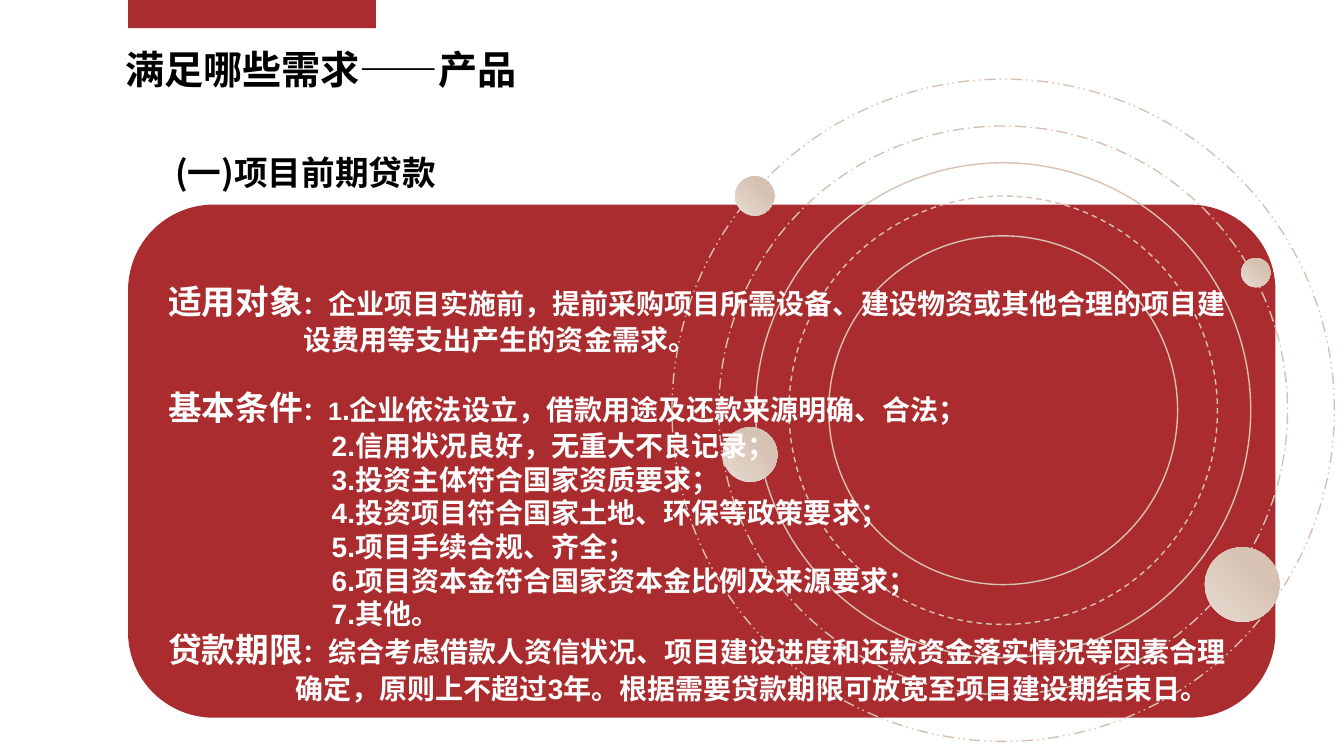
from lxml import etree
from pptx import Presentation
from pptx.dml.color import RGBColor
from pptx.enum.dml import MSO_LINE
from pptx.enum.shapes import MSO_SHAPE
from pptx.enum.text import MSO_ANCHOR, MSO_AUTO_SIZE, PP_ALIGN
from pptx.oxml.ns import qn
from pptx.util import Inches, Pt

RECTANGLE = MSO_SHAPE.RECTANGLE
ROUNDED = MSO_SHAPE.ROUNDED_RECTANGLE
OVAL = MSO_SHAPE.OVAL
SOLID, DASH = MSO_LINE.SOLID, MSO_LINE.DASH
DASH_DOT, DASH_DOT_DOT = MSO_LINE.LONG_DASH_DOT, MSO_LINE.DASH_DOT_DOT
TOP, MIDDLE = MSO_ANCHOR.TOP, MSO_ANCHOR.MIDDLE
LEFT = PP_ALIGN.LEFT
NO_AUTOFIT = MSO_AUTO_SIZE.NONE
RED, SAND, PALE_SAND = "AA2C2F", "D6C1B2", "E7DBD2"
WHITE, BLACK = "FFFFFF", "000000"
CHINESE_FONT = "Noto Sans CJK SC"


def rgb(value):
    return RGBColor.from_string(value)


def add_run(paragraph, text, size, color, font="Arial"):
    run = paragraph.add_run()
    run.text = text
    run.font.size = Pt(size)
    run.font.bold = True
    run.font.color.rgb = rgb(color)
    run.font.name = font
    properties = run.font._element
    etree.SubElement(properties, qn("a:ea")).set("typeface", CHINESE_FONT)


presentation = Presentation()
presentation.slide_width = Inches(13.33)
presentation.slide_height = Inches(7.5)
slide = presentation.slides.add_slide(presentation.slide_layouts[1])

for kind, left, top, width, height in [
    (RECTANGLE, 1.27, 0, 2.46, 0.28),
    (ROUNDED, 1.27, 2.03, 11.38, 5.09),
]:
    panel = slide.shapes.add_shape(
        kind, Inches(left), Inches(top), Inches(width), Inches(height))
    panel.shadow.inherit = False
    panel.fill.solid()
    panel.fill.fore_color.rgb = rgb(RED)
    panel.line.fill.background()

orbits = slide.shapes.add_group_shape()
center_x, center_y = 9.95, 4.07
for diameter, dash in [
    (4.25, DASH), (3.46, SOLID), (4.91, SOLID), (5.64, DASH_DOT), (6.57, DASH_DOT_DOT),
]:
    ring = orbits.shapes.add_shape(
        OVAL, Inches(center_x - diameter / 2), Inches(center_y - diameter / 2),
        Inches(diameter), Inches(diameter))
    ring.shadow.inherit = False
    ring.fill.background()
    ring.line.color.rgb = rgb(SAND)
    ring.line.width = Pt(1)
    ring.line.dash_style = dash

for left, top, diameter in [
    (7.29, 1.75, 0.39), (11.95, 5.43, 0.74), (7.17, 4.24, 0.54), (12.31, 2.56, 0.29),
]:
    planet = orbits.shapes.add_shape(
        OVAL, Inches(left), Inches(top), Inches(diameter), Inches(diameter))
    planet.shadow.inherit = False
    planet.line.fill.background()
    planet.fill.gradient()
    planet.fill.gradient_angle = 45
    for stop, color, position in zip(
            planet.fill.gradient_stops, (PALE_SAND, SAND), (0, 0.74)):
        stop.color.rgb = rgb(color)
        stop.position = position

title = slide.shapes.title
body = slide.placeholders[1]
subtitle = slide.shapes.add_textbox(0, 0, 0, 0)
for shape, left, top, width, height, anchor in [
    (body, 1.57, 2.41, 10.85, 4.6, TOP),
    (title, 1.14, 0.4, 5.95, 0.57, MIDDLE),
    (subtitle, 1.64, 1.46, 3.55, 0.55, TOP),
]:
    shape.left, shape.top = Inches(left), Inches(top)
    shape.width, shape.height = Inches(width), Inches(height)
    shape.text_frame.word_wrap = True
    shape.text_frame.auto_size = NO_AUTOFIT
    shape.text_frame.vertical_anchor = anchor
    slide.shapes.element.append(shape.element)

heading = title.text_frame.paragraphs[0]
heading.alignment = LEFT
add_run(heading, "满足哪些需求——产品", 28, BLACK)

section = subtitle.text_frame.paragraphs[0]
add_run(section, "(一)", 24, BLACK, CHINESE_FONT)
add_run(section, "项目前期贷款", 24, BLACK)

body.text_frame.margin_top = Inches(0.44)
lines = [
    (0, 0, [("适用对象", 24), ("：", 18),
            ("企业项目实施前，提前采购项目所需设备、建设物资或其他合理的项目建", 20)]),
    (1.34, 1, [("设费用等支出产生的资金需求。", 20)]),
    (0, 27, [("基本条件", 24), ("：1", 18),
             (".企业依法设立，借款用途及还款来源明确、合法；", 20)]),
    (1.62, 1, [("2.信用状况良好，无重大不良记录；", 20)]),
    (1.62, 0, [("3.投资主体符合国家资质要求；", 20)]),
    (1.62, 0, [("4.投资项目符合国家土地、环保等政策要求；", 20)]),
    (1.62, 0, [("5.项目手续合规、齐全；", 20)]),
    (1.62, 0, [("6.项目资本金符合国家资本金比例及来源要求；", 20)]),
    (1.62, 0, [("7.其他。", 20)]),
    (0, 4, [("贷款期限", 24), ("：", 18),
            ("综合考虑借款人资信状况、项目建设进度和还款资金落实情况等因素合理", 20)]),
    (1.26, 1, [("确定，原则上不超过3年。根据需要贷款期限可放宽至项目建设期结束日。", 20)]),
]
for index, (indent, space_before, runs) in enumerate(lines):
    frame = body.text_frame
    paragraph = frame.add_paragraph() if index else frame.paragraphs[0]
    paragraph.alignment = LEFT
    paragraph.line_spacing = Pt(24)
    paragraph.space_before = Pt(space_before)
    properties = paragraph._p.get_or_add_pPr()
    properties.set("marL", str(Inches(indent)))
    properties.set("indent", "0")
    etree.SubElement(properties, qn("a:buNone"))
    for text, size in runs:
        add_run(paragraph, text, size, WHITE)

presentation.save("out.pptx")
